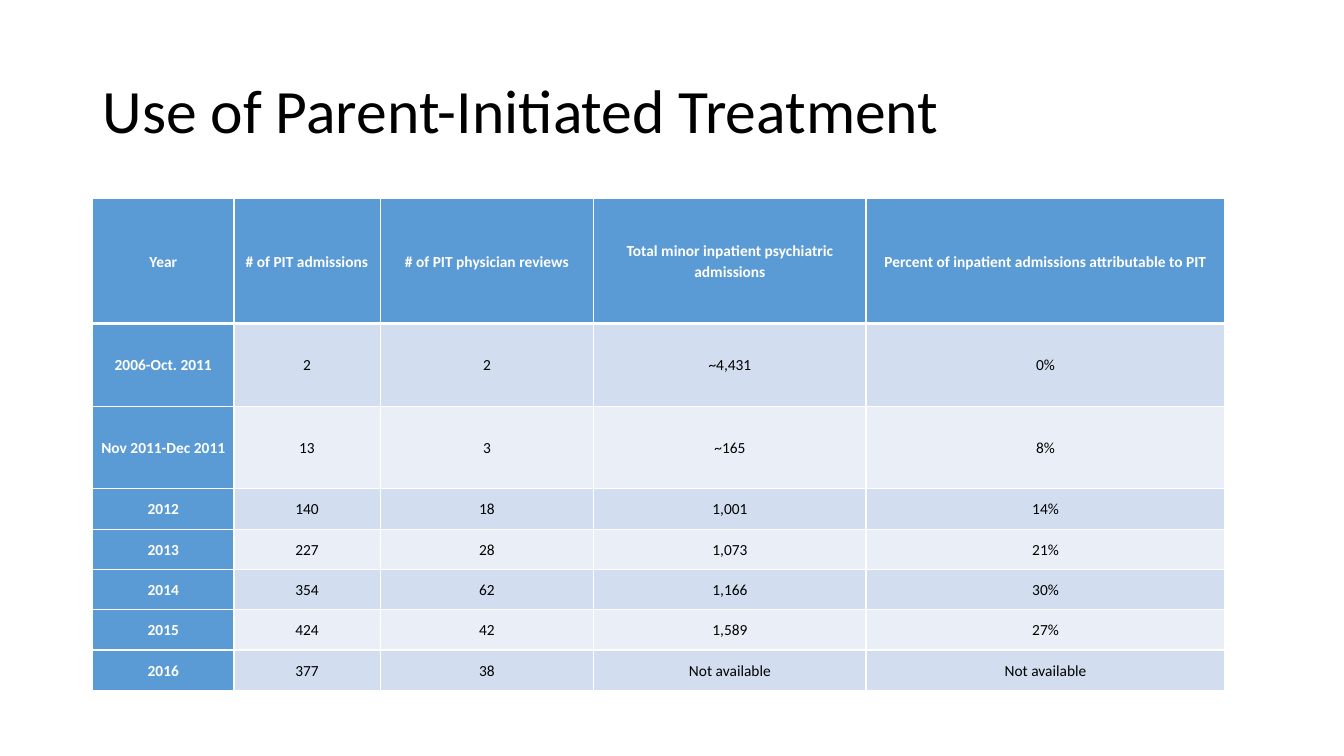
from pptx import Presentation
from pptx.dml.color import RGBColor
from pptx.enum.text import MSO_ANCHOR as Anchor, PP_ALIGN as Align
from pptx.oxml.ns import qn
from pptx.util import Inches, Pt
from lxml.etree import SubElement

# Content
TITLE = "Use of Parent-Initiated Treatment"
ADMISSIONS = [
    ("Year", "# of PIT admissions", "# of PIT physician reviews",
     "Total minor inpatient psychiatric admissions",
     "Percent of inpatient admissions attributable to PIT"),
    ("2006-Oct. 2011", "2", "2", "~4,431", "0%"),
    ("Nov 2011-Dec 2011", "13", "3", "~165", "8%"),
    ("2012", "140", "18", "1,001", "14%"),
    ("2013", "227", "28", "1,073", "21%"),
    ("2014", "354", "62", "1,166", "30%"),
    ("2015", "424", "42", "1,589", "27%"),
    ("2016", "377", "38", "Not available", "Not available"),
]
COLUMN_WIDTHS = [1.4, 1.45, 2.12, 2.7, 3.56]
ROW_HEIGHTS = [1.24] + [0.82] * 2 + [0.4] * 5
COLORS = {"heading": "5B9BD5", "odd": "D2DEEF", "even": "EAEFF7",
          "white": "FFFFFF", "black": "000000"}
FONT = "Calibri"
LEFT = 0.92


def rgb(name):
    return RGBColor.from_string(COLORS[name])


def write(paragraph, text, size, color, bold, spacing):
    paragraph.line_spacing = spacing
    run = paragraph.add_run()
    run.text = text
    run.font.name = FONT
    run.font.size = Pt(size)
    run.font.bold = bold
    run.font.color.rgb = rgb(color)


def add_borders(cell, row):
    widths = {"a:lnL": 1, "a:lnR": 1,
              "a:lnT": 3 if row == 1 else 1, "a:lnB": 3 if row == 0 else 1}
    properties = cell._tc.get_or_add_tcPr()
    for side, width in widths.items():
        border = SubElement(properties, qn(side), w=str(Pt(width)))
        fill = SubElement(border, qn("a:solidFill"))
        SubElement(fill, qn("a:srgbClr"), val=COLORS["white"])


prs = Presentation()
prs.slide_width, prs.slide_height = Inches(13.33), Inches(7.5)
slide = prs.slides.add_slide(prs.slide_layouts[6])

# Title
title = slide.shapes.add_textbox(
    Inches(LEFT), Inches(0.4), Inches(11.5), Inches(1.45)).text_frame
title.word_wrap = True
title.vertical_anchor = Anchor.MIDDLE
write(title.paragraphs[0], TITLE, 44, "black", False, 0.9)

# Table grid
table = slide.shapes.add_table(
    len(ROW_HEIGHTS), len(COLUMN_WIDTHS), Inches(LEFT), Inches(1.97),
    Inches(sum(COLUMN_WIDTHS)), Inches(sum(ROW_HEIGHTS))).table
table.first_col = True
for column, width in zip(table.columns, COLUMN_WIDTHS):
    column.width = Inches(width)
for table_row, height in zip(table.rows, ROW_HEIGHTS):
    table_row.height = Inches(height)

# Table cells: headings in the first row and column, banded figures elsewhere
for row, entries in enumerate(ADMISSIONS):
    for col, entry in enumerate(entries):
        is_heading = row == 0 or col == 0
        band = "odd" if row % 2 else "even"
        cell = table.cell(row, col)
        cell.vertical_anchor = Anchor.MIDDLE
        cell.margin_left = cell.margin_right = Inches(0.07)
        cell.margin_top = cell.margin_bottom = 0
        add_borders(cell, row)
        cell.fill.solid()
        cell.fill.fore_color.rgb = rgb("heading" if is_heading else band)
        paragraph = cell.text_frame.paragraphs[0]
        paragraph.alignment = Align.CENTER
        write(paragraph, entry, 11, "white" if is_heading else "black",
              is_heading, 1.07)

prs.save("out.pptx")
